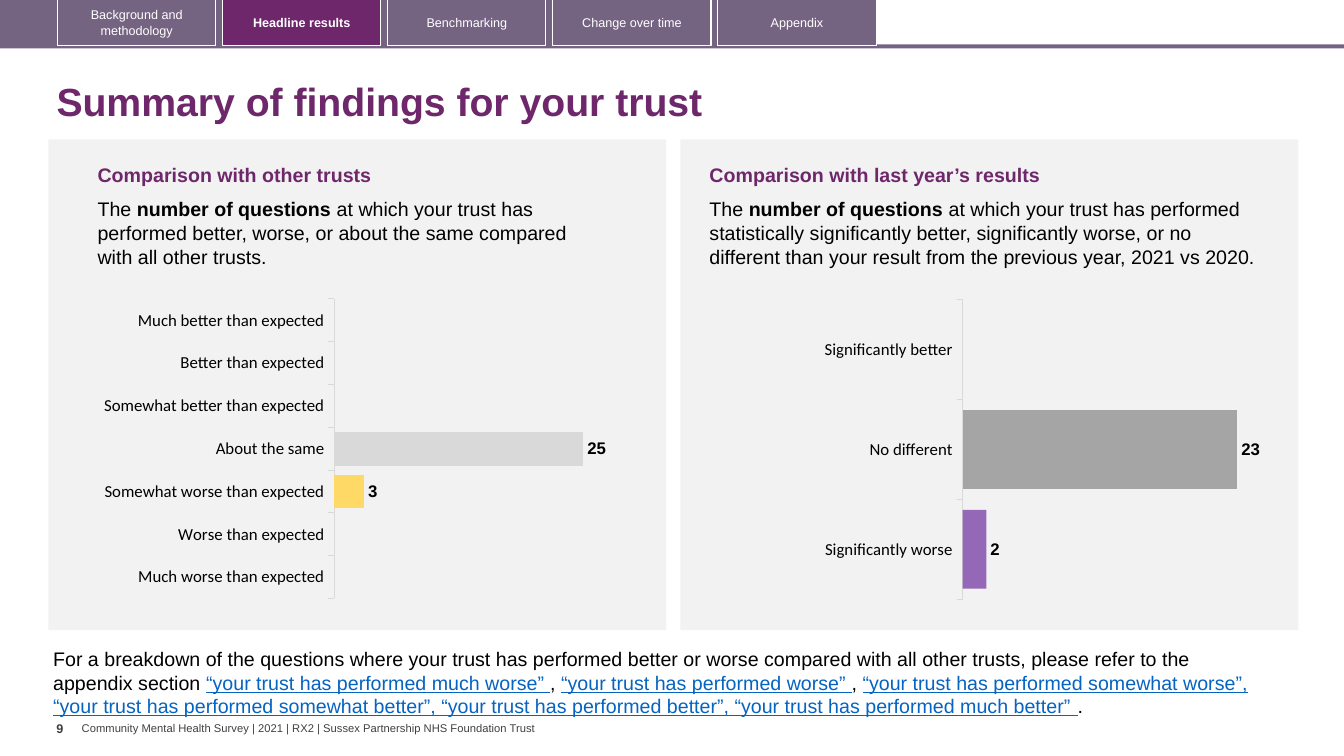
from dataclasses import dataclass

from lxml import etree
from pptx import Presentation
from pptx import util as u
from pptx.chart import data
from pptx.dml import color
from pptx.enum import chart as ch
from pptx.enum import shapes, text
from pptx.oxml import ns

INK = {
    "plum": "6D276A", "mauve": "756382", "white": "FFFFFF", "panel": "F2F2F2",
    "black": "000000", "grey": "404040", "link": "0563C1", "axis": "D9D9D9",
    "series": "4472C4", "teal": "419999", "green": "5FBD83", "lime": "A9D18E",
    "silver": "D9D9D9", "yellow": "FFD966", "amber": "F1BE48", "orange": "E87722",
    "sky": "9DC3E6", "steel": "A5A5A5", "violet": "7030A0",
}


@dataclass(frozen=True)
class Box:
    x: float
    y: float
    w: float
    h: float

    def cm(self) -> list[u.Cm]:
        return [u.Cm(n) for n in (self.x, self.y, self.w, self.h)]


@dataclass(frozen=True)
class Run:
    words: str
    size: float = 14
    ink: str = "black"
    bold: bool = False
    under: bool = False


@dataclass(frozen=True)
class Bar:
    label: str
    value: int | None
    ink: str
    alpha: int = 100


@dataclass(frozen=True)
class Panel:
    x: float
    left: float
    width: float
    head: str
    tail: str
    plot: Box
    top: int
    bars: list[Bar]


TABS = ["Background and methodology", "Headline results", "Benchmarking",
        "Change over time", "Appendix"]
ACTIVE = "Headline results"

PANELS = [
    Panel(1.22, 2.21, 12.7, "Comparison with other trusts",
          "at which your trust has performed better, worse, or about the same "
          "compared with all other trusts.",
          Box(1.04, 6.91, 15.82, 8.66), 30,
          [Bar("Much better than expected", None, "teal"),
           Bar("Better than expected", None, "green"),
           Bar("Somewhat better than expected", None, "lime"),
           Bar("About the same", 25, "silver"),
           Bar("Somewhat worse than expected", 3, "yellow"),
           Bar("Worse than expected", None, "amber"),
           Bar("Much worse than expected", None, "orange")]),
    Panel(17.15, 17.63, 14.35, "Comparison with last year’s results",
          "at which your trust has performed statistically significantly better, "
          "significantly worse, or no different than your result from the previous "
          "year, 2021 vs 2020.",
          Box(16.87, 6.93, 15.82, 8.66), 25,
          [Bar("Significantly better", None, "sky"),
           Bar("No different", 23, "steel"),
           Bar("Significantly worse", 2, "violet", 71)]),
]

NOTE = [
    Run("For a breakdown of the questions where your trust has performed better or "
        "worse compared with all other trusts, please refer to the appendix section "),
    Run("“your trust has performed much worse” ", ink="link", under=True),
    Run(", "),
    Run("“your trust has performed worse” ", ink="link", under=True),
    Run(", "),
    Run("“your trust has performed somewhat worse”, “your trust has performed "
        "somewhat better”, “your trust has performed better”, “your trust has "
        "performed much better” ", ink="link", under=True),
    Run("."),
]


def rgb(ink: str) -> color.RGBColor:
    return color.RGBColor.from_string(INK[ink])


def style(font, size: float, ink: str, bold: bool = False, face: str = "Arial") -> None:
    font.name, font.size, font.bold = face, u.Pt(size), bold
    font.color.rgb = rgb(ink)


def write(frame, runs: list[Run], align=text.PP_ALIGN.LEFT) -> None:
    line = frame.paragraphs[0]
    line.alignment = align
    for run in runs:
        part = line.add_run()
        part.text = run.words
        style(part.font, run.size, run.ink, run.bold)
        part.font.underline = run.under


def block(slide, box: Box, fill: str | None, edge: str | None = None):
    shape = slide.shapes.add_shape(shapes.MSO_SHAPE.RECTANGLE, *box.cm())
    shape.shadow.inherit = False
    if fill:
        shape.fill.solid()
        shape.fill.fore_color.rgb = rgb(fill)
    else:
        shape.fill.background()
    if edge:
        shape.line.color.rgb = rgb(edge)
        shape.line.width = u.Pt(0.75)
    else:
        shape.line.fill.background()
    return shape


def label(slide, box: Box, runs: list[Run], wrap: bool = True):
    frame = slide.shapes.add_textbox(*box.cm()).text_frame
    frame.word_wrap = wrap
    write(frame, runs)
    return frame


def inner(chart) -> None:
    area = chart.element.find(".//" + ns.qn("c:plotArea"))
    for old in area.findall(ns.qn("c:layout")):
        area.remove(old)
    layout = etree.Element(ns.qn("c:layout"))
    manual = etree.SubElement(layout, ns.qn("c:manualLayout"))
    for tag, val in (("layoutTarget", "inner"), ("xMode", "edge"), ("yMode", "edge"),
                     ("x", "0.467"), ("y", "0.072"), ("w", "0.476"), ("h", "0.872")):
        etree.SubElement(manual, ns.qn("c:" + tag)).set("val", val)
    area.insert(0, layout)


def graph(slide, panel: Panel) -> None:
    table = data.CategoryChartData(number_format="0")
    table.categories = [bar.label for bar in panel.bars]
    table.add_series("Series 1", [bar.value for bar in panel.bars])
    chart = slide.shapes.add_chart(
        ch.XL_CHART_TYPE.BAR_CLUSTERED, *panel.plot.cm(), table).chart
    chart.has_legend = chart.has_title = False
    style(chart.font, 10, "black", face="Calibri")
    inner(chart)

    names = chart.category_axis
    names.reverse_order = True
    names.has_major_gridlines = False
    names.major_tick_mark = ch.XL_TICK_MARK.OUTSIDE
    names.format.line.color.rgb = rgb("axis")
    names.format.line.width = u.Pt(0.75)
    style(names.tick_labels.font, 12, "black", face="Calibri")
    scale = chart.value_axis
    scale.visible = scale.has_major_gridlines = False
    scale.minimum_scale, scale.maximum_scale = 0, panel.top

    plot = chart.plots[0]
    plot.gap_width = 27
    plot.vary_by_categories = False
    row = plot.series[0]
    row.invert_if_negative = False
    row.format.fill.solid()
    row.format.fill.fore_color.rgb = rgb("series")
    for i, bar in enumerate(panel.bars):
        fill = row.points[i].format.fill
        fill.solid()
        fill.fore_color.rgb = rgb(bar.ink)
        if bar.alpha < 100:
            for node in chart.element.iter(ns.qn("a:srgbClr")):
                if node.get("val") == INK[bar.ink]:
                    etree.SubElement(node, ns.qn("a:alpha")).set("val", str(bar.alpha * 1000))
    marks = row.data_labels
    marks.show_value = True
    marks.position = ch.XL_LABEL_POSITION.OUTSIDE_END
    marks.number_format, marks.number_format_is_linked = "0", False
    style(marks.font, 12, "black", True)


def main() -> None:
    deck = Presentation()
    deck.slide_width, deck.slide_height = u.Cm(33.87), u.Cm(19.05)
    slide = deck.slides.add_slide(deck.slide_layouts[5])

    block(slide, Box(0, 1.12, 33.87, 0.1), "mauve")
    block(slide, Box(0, 0, 22.1, 1.19), "mauve")
    for i, name in enumerate(TABS):
        on = name == ACTIVE
        tab = block(slide, Box(1.45 + 4.16 * i, -0.03, 3.99, 1.19),
                    "plum" if on else None, "white")
        tab.text_frame.vertical_anchor = text.MSO_ANCHOR.MIDDLE
        write(tab.text_frame, [Run(name, 9, "white", on)], text.PP_ALIGN.CENTER)

    title = slide.shapes.title
    title.left, title.top, title.width, title.height = Box(1.17, 1.7, 31.72, 1.83).cm()
    title.text_frame.vertical_anchor = text.MSO_ANCHOR.MIDDLE
    write(title.text_frame, [Run("Summary of findings for your trust", 28, "plum", True)])
    title.text_frame.paragraphs[0].line_spacing = 0.9

    for panel in PANELS:
        block(slide, Box(panel.x, 3.51, 15.57, 12.37), "panel")
        label(slide, Box(panel.left, 3.99, 14.02, 0.86),
              [Run(panel.head, ink="plum", bold=True)])
        label(slide, Box(panel.left, 4.85, panel.width, 2.06),
              [Run("The "), Run("number of questions ", bold=True), Run(panel.tail)])
        graph(slide, panel)

    label(slide, Box(1.09, 16.18, 31.01, 2.06), NOTE)
    page = label(slide, Box(1.42, 18.03, 0.64, 1.02), [Run("9", 9, "grey", True)], False)
    page.margin_left = page.margin_right = 0
    foot = label(slide, Box(2.06, 18.19, 11.58, 0.33), [Run(
        "Community Mental Health Survey | 2021 | RX2 | "
        "Sussex Partnership NHS Foundation Trust", 8, "grey")], False)
    foot.margin_left = foot.margin_right = foot.margin_top = foot.margin_bottom = 0
    foot.vertical_anchor = text.MSO_ANCHOR.MIDDLE

    deck.save("out.pptx")


if __name__ == "__main__":
    main()
